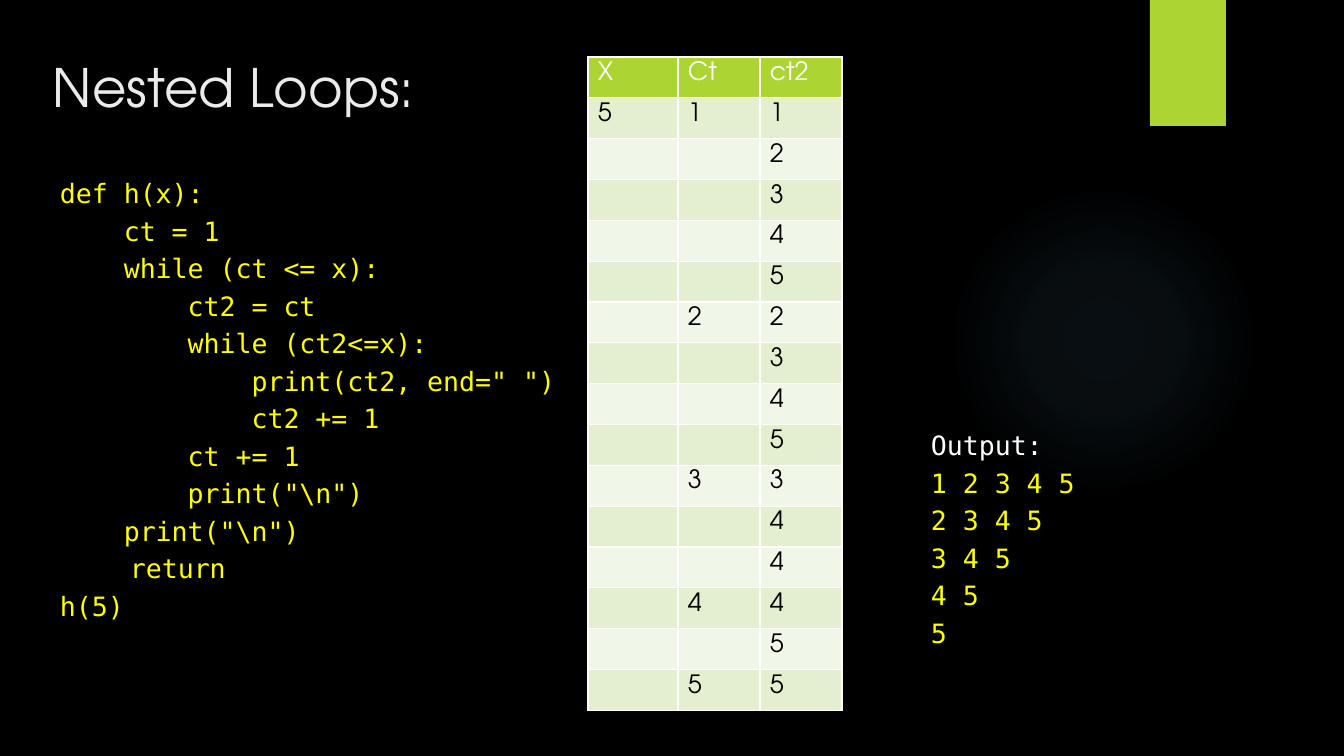
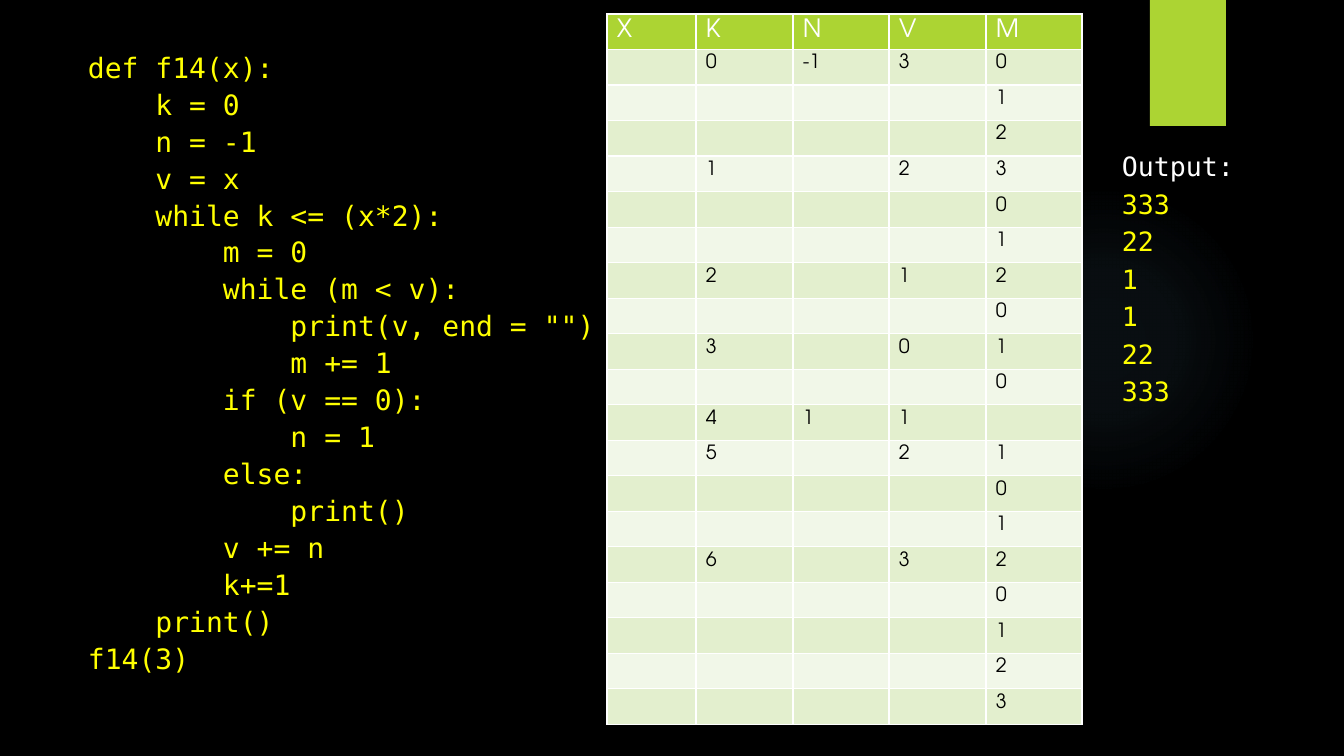
from dataclasses import dataclass

from lxml.etree import SubElement
from pptx import Presentation
from pptx.dml.color import RGBColor
from pptx.enum.shapes import MSO_SHAPE
from pptx.enum.text import MSO_ANCHOR, PP_ALIGN
from pptx.oxml import parse_xml
from pptx.oxml.ns import nsdecls, qn
from pptx.util import Emu, Pt

SLIDE_WIDTH, SLIDE_HEIGHT = 1344, 756
EMU_PER_PIXEL = 12192000 / SLIDE_WIDTH


@dataclass(frozen=True)
class Theme:
    background: str = "000000"
    accent: str = "ACD433"
    glow: str = "7AC4F0"
    title: str = "EBEBEB"
    code: str = "FFFF00"
    white: str = "FFFFFF"
    cell_text: str = "000000"
    bands: tuple = ("E3EFCE", "F1F7E8")
    heading_font: str = "TeX Gyre Adventor"
    code_font: str = "DejaVu Sans Mono"
    title_size: float = 37.8
    code_size: int = 19
    large_code_size: int = 20
    table_size: int = 18
    small_table_size: int = 14
    border_width: int = 1


THEME = Theme()

NESTED_LOOPS_CODE = [
    "def h(x):",
    "    ct = 1",
    "    while (ct <= x):",
    "        ct2 = ct",
    "        while (ct2<=x):",
    '            print(ct2, end=" ")',
    "            ct2 += 1",
    "        ct += 1",
    '        print("\\n")',
    '    print("\\n")',
    "\t  return",
    "h(5)",
]
NESTED_LOOPS_OUTPUT = ["1 2 3 4 5", "2 3 4 5", "3 4 5", "4 5", "5"]
NESTED_LOOPS_TRACE = [
    "X|Ct|ct2",
    "5|1|1", "||2", "||3", "||4", "||5",
    "|2|2", "||3", "||4", "||5",
    "|3|3", "||4", "||4",
    "|4|4", "||5",
    "|5|5",
]

F14_CODE = [
    "def f14(x):",
    "    k = 0",
    "    n = -1",
    "    v = x",
    "    while k <= (x*2):",
    "        m = 0",
    "        while (m < v):",
    '            print(v, end = "")',
    "            m += 1",
    "        if (v == 0):",
    "            n = 1",
    "        else:",
    "            print()",
    "        v += n",
    "        k+=1",
    "    print()",
    "f14(3)",
]
F14_OUTPUT = ["333", "22", "1", "1", "22", "333"]
F14_TRACE = [
    "X|K|N|V|M",
    "|0|-1|3|0", "||||1", "||||2",
    "|1||2|3", "||||0", "||||1",
    "|2||1|2", "||||0",
    "|3||0|1", "||||0",
    "|4|1|1|",
    "|5||2|1", "||||0", "||||1",
    "|6||3|2", "||||0", "||||1", "||||2", "||||3",
]


def pixels(length):
    return Emu(round(length * EMU_PER_PIXEL))


def place(box):
    return [pixels(length) for length in box]


def add_run(paragraph, text, font_name, size, color):
    run = paragraph.add_run()
    run.text = text
    run.font.name = font_name
    run.font.size = Pt(size)
    run.font.color.rgb = RGBColor.from_string(color)


def add_text_frame(slide, box, anchor=MSO_ANCHOR.TOP):
    text_frame = slide.shapes.add_textbox(*place(box)).text_frame
    text_frame.word_wrap = True
    text_frame.vertical_anchor = anchor
    return text_frame


def add_plain_shape(slide, preset, box):
    shape = slide.shapes.add_shape(preset, *place(box))
    shape.shadow.inherit = False
    shape.line.fill.background()
    return shape


def add_glow(slide, box):
    glow = add_plain_shape(slide, MSO_SHAPE.OVAL, box)
    glow.fill.background()
    stops = "".join(
        f'<a:gs pos="{position * 1000}"><a:srgbClr val="{THEME.glow}">'
        f'<a:alpha val="{alpha * 1000}"/></a:srgbClr></a:gs>'
        for position, alpha in ((0, 7), (36, 6), (69, 0), (100, 0))
    )
    gradient = parse_xml(
        f'<a:gradFill {nsdecls("a")} rotWithShape="1"><a:gsLst>{stops}</a:gsLst>'
        '<a:path path="circle"><a:fillToRect l="50000" t="50000" r="50000" b="50000"/>'
        "</a:path></a:gradFill>"
    )
    properties = glow.element.spPr
    properties.replace(properties.find(qn("a:noFill")), gradient)


def add_backdrop(presentation):
    slide = presentation.slides.add_slide(presentation.slide_layouts[6])
    slide.background.fill.solid()
    slide.background.fill.fore_color.rgb = RGBColor.from_string(THEME.background)
    add_glow(slide, (949, 185, 310, 310))
    ribbon = add_plain_shape(slide, MSO_SHAPE.RECTANGLE, (1150, 0, 76, 126))
    ribbon.fill.solid()
    ribbon.fill.fore_color.rgb = RGBColor.from_string(THEME.accent)
    return slide


def add_title(slide, box, text):
    text_frame = add_text_frame(slide, box, MSO_ANCHOR.MIDDLE)
    add_run(text_frame.paragraphs[0], text, THEME.heading_font, THEME.title_size, THEME.title)


def add_code_lines(slide, box, colored_lines, size, space_before=0, line_spacing=1, hanging=0):
    text_frame = add_text_frame(slide, box)
    for index, (line, color) in enumerate(colored_lines):
        paragraph = text_frame.add_paragraph() if index else text_frame.paragraphs[0]
        paragraph.alignment = PP_ALIGN.LEFT
        paragraph.line_spacing = line_spacing
        paragraph.space_before = Pt(space_before if index else 0)
        if hanging:
            properties = paragraph._p.get_or_add_pPr()
            properties.set("marL", str(pixels(hanging)))
            properties.set("indent", str(-pixels(hanging)))
        add_run(paragraph, line, THEME.code_font, size, color)


def add_code(slide, box, lines, size, **spacing):
    add_code_lines(slide, box, [(line, THEME.code) for line in lines], size, **spacing)


def add_output(slide, box, lines):
    colored_lines = [("Output:", THEME.white)] + [(line, THEME.code) for line in lines]
    add_code_lines(slide, box, colored_lines, THEME.code_size, space_before=4, hanging=38)


def add_borders(cell):
    properties = cell._tc.get_or_add_tcPr()
    for index, side in enumerate(("lnL", "lnR", "lnT", "lnB")):
        border = parse_xml(
            f'<a:{side} {nsdecls("a")} w="{Pt(THEME.border_width)}"><a:solidFill>'
            f'<a:srgbClr val="{THEME.white}"/></a:solidFill></a:{side}>'
        )
        properties.insert(index, border)


def fill_cell(cell, text, fill, color, size):
    cell.fill.solid()
    cell.fill.fore_color.rgb = RGBColor.from_string(fill)
    cell.margin_left = cell.margin_right = pixels(10)
    cell.margin_top, cell.margin_bottom = pixels(5), 0
    add_borders(cell)
    paragraph = cell.text_frame.paragraphs[0]
    if text:
        add_run(paragraph, text, THEME.heading_font, size, color)
    else:
        SubElement(paragraph._p, qn("a:endParaRPr"), sz=str(size * 100))


def add_trace_table(slide, box, column_widths, trace, body_size):
    table = slide.shapes.add_table(len(trace), len(column_widths), *place(box)).table
    for column, width in zip(table.columns, column_widths):
        column.width = pixels(width)
    for row_index, line in enumerate(trace):
        table.rows[row_index].height = pixels(box[3] / len(trace))
        if row_index == 0:
            style = THEME.accent, THEME.white, THEME.table_size
        else:
            style = THEME.bands[(row_index - 1) % 2], THEME.cell_text, body_size
        for column_index, text in enumerate(line.split("|")):
            fill_cell(table.cell(row_index, column_index), text, *style)


def add_nested_loops_slide(presentation):
    slide = add_backdrop(presentation)
    add_title(slide, (43, 49, 572, 74), "Nested Loops:")
    add_code(slide, (50, 172, 565, 491), NESTED_LOOPS_CODE, THEME.code_size,
             space_before=4, hanging=38)
    add_output(slide, (921, 424, 196, 282), NESTED_LOOPS_OUTPUT)
    add_trace_table(slide, (588, 57, 254, 654), (90, 82, 82),
                    NESTED_LOOPS_TRACE, THEME.table_size)


def add_f14_slide(presentation):
    slide = add_backdrop(presentation)
    add_code(slide, (78, 42, 1136, 671), F14_CODE, THEME.large_code_size, line_spacing=1.1)
    add_output(slide, (1112, 145, 203, 529), F14_OUTPUT)
    add_trace_table(slide, (607, 14, 475, 711), (89, 97, 96, 97, 96),
                    F14_TRACE, THEME.small_table_size)


def main():
    presentation = Presentation()
    presentation.slide_width = pixels(SLIDE_WIDTH)
    presentation.slide_height = pixels(SLIDE_HEIGHT)
    add_nested_loops_slide(presentation)
    add_f14_slide(presentation)
    presentation.save("out.pptx")


if __name__ == "__main__":
    main()
